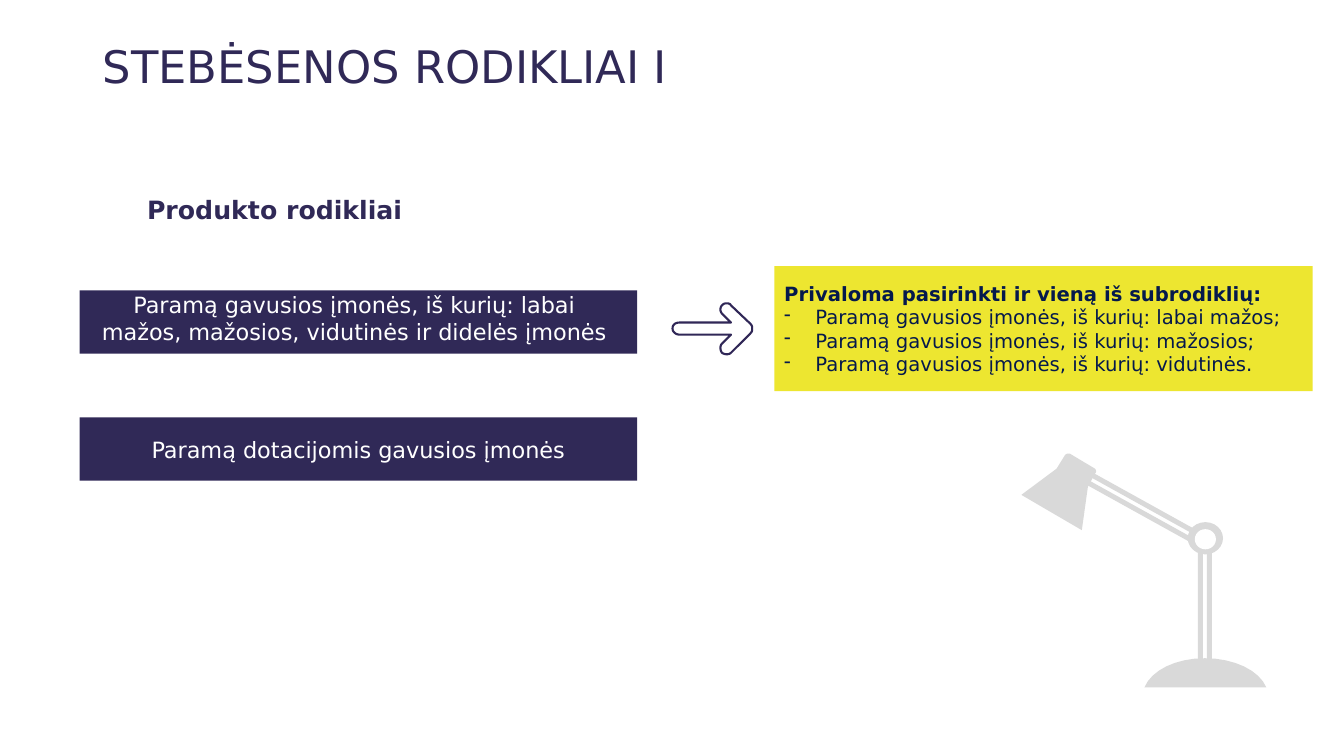
"""Build the slide on monitoring indicators, with a desk lamp as decoration."""
from lxml import etree
from pptx import Presentation
from pptx.dml.color import RGBColor
from pptx.enum.shapes import MSO_SHAPE
from pptx.enum.text import MSO_ANCHOR, MSO_AUTO_SIZE, PP_ALIGN
from pptx.oxml.ns import qn
from pptx.util import Pt

PX = 9144
FONT = "DejaVu Sans"
NAVY = RGBColor(0x30, 0x29, 0x57)
EDGE = RGBColor(0x30, 0x27, 0x57)
INK = RGBColor(0x05, 0x19, 0x4C)
GOLD = RGBColor(0xED, 0xE6, 0x30)
GREY = RGBColor(0xD9, 0xD9, 0xD9)
WHITE = RGBColor(0xFF, 0xFF, 0xFF)
RECT, OVAL = MSO_SHAPE.RECTANGLE, MSO_SHAPE.OVAL
TOP, MIDDLE = MSO_ANCHOR.TOP, MSO_ANCHOR.MIDDLE
LEFT, CENTER = PP_ALIGN.LEFT, PP_ALIGN.CENTER
NO_FIT = MSO_AUTO_SIZE.NONE


def write(shape, text, size, color, align=LEFT, anchor=MIDDLE, wrap=True):
    """Fill a shape with text in one style."""
    frame = shape.text_frame
    frame.text = text
    frame.word_wrap = wrap
    frame.auto_size = NO_FIT
    frame.vertical_anchor = anchor
    for para in frame.paragraphs:
        para.alignment = align
        for run in para.runs:
            run.font.name = FONT
            run.font.size = Pt(size)
            run.font.color.rgb = color
    return frame


def trace(shapes, start, steps):
    """Draw a closed outline of lines (2 numbers) and curves (6 numbers)."""
    pen = shapes.build_freeform(start[0] * PX, start[1] * PX, 1.0)
    points = []
    last = start
    for step in steps:
        if len(step) == 2:
            points.append(step)
        else:
            knots = [last, step[:2], step[2:4], step[4:]]
            for i in range(1, 9):
                t = i / 8
                u = 1 - t
                mix = (u ** 3, 3 * u * u * t, 3 * u * t * t, t ** 3)
                points.append(tuple(
                    sum(m * k[axis] for m, k in zip(mix, knots)) for axis in (0, 1)))
        last = step[-2:]
    pen.add_line_segments([(x * PX, y * PX) for x, y in points], close=True)
    shape = pen.convert_to_shape()
    shape.shadow.inherit = False
    return shape


deck = Presentation()
deck.slide_width, deck.slide_height = 1333 * PX, 750 * PX
slide = deck.slides.add_slide(deck.slide_layouts[5])
shapes = slide.shapes

title = shapes.title
title.left, title.top, title.width, title.height = [n * PX for n in (92, 16, 734, 99)]
write(title, "STEBĖSENOS RODIKLIAI I", 32, NAVY)

lamp = shapes.add_group_shape()
parts = [
    (RECT, 1137, 435, 5, 135, -61, GREY),
    (RECT, 1132, 442, 5, 135, -61, GREY),
    (RECT, 1197, 535, 5, 123, 0, GREY),
    (RECT, 1188, 534, 5, 123, 0, GREY),
    (OVAL, 1178, 518, 35, 32, 0, GREY),
    (OVAL, 1185, 525, 21, 20, 0, WHITE),
]
for kind, x, y, w, h, turn, color in parts:
    part = lamp.shapes.add_shape(kind, x * PX, y * PX, w * PX, h * PX)
    part.rotation = turn
    part.shadow.inherit = False
    part.fill.solid()
    part.fill.fore_color.rgb = color
    part.line.fill.background()

foot = trace(lamp.shapes, (1195, 653), [
    (1166, 653, 1142, 665, 1135, 682), (1256, 682),
    (1249, 665, 1224, 653, 1195, 653)])
shade = trace(lamp.shapes, (1086, 465), [
    (1061, 450), (1059, 450, 1057, 450, 1056, 452), (1048, 465),
    (1013, 491), (1073, 526), (1079, 483), (1086, 470),
    (1088, 468, 1087, 466, 1086, 465)])
for part in (foot, shade):
    part.fill.solid()
    part.fill.fore_color.rgb = GREY
    part.line.fill.background()

boxes = []
for x, y, w, h, color in [(79, 288, 553, 63, NAVY), (79, 414, 553, 63, NAVY),
                          (768, 264, 534, 124, GOLD)]:
    box = shapes.add_shape(RECT, x * PX, y * PX, w * PX, h * PX)
    box.shadow.inherit = False
    box.fill.solid()
    box.fill.fore_color.rgb = color
    box.line.fill.background()
    boxes.append(box)

label = shapes.add_textbox(84 * PX, 284 * PX, 535 * PX, 64 * PX)
write(label, "Paramą gavusios įmonės, iš kurių: labai mažos, mažosios, "
      "vidutinės ir didelės įmonės", 16, WHITE, CENTER, TOP)
write(boxes[1], "Paramą dotacijomis gavusios įmonės", 16, WHITE, CENTER)

head = shapes.add_textbox(136 * PX, 188 * PX, 275 * PX, 40 * PX)
frame = write(head, "Produkto rodikliai", 18, NAVY, anchor=TOP, wrap=False)
frame.paragraphs[0].runs[0].font.bold = True

lines = ["Privaloma pasirinkti ir vieną iš subrodiklių:"]
for kind in ("labai mažos;", "mažosios;", "vidutinės."):
    lines.append("Paramą gavusios įmonės, iš kurių: " + kind)
frame = write(boxes[2], "\n".join(lines), 14, INK)
frame.paragraphs[0].runs[0].font.bold = True
for para in frame.paragraphs[1:]:
    props = para._p.get_or_add_pPr()
    props.set("marL", str(31 * PX))
    props.set("indent", str(-31 * PX))
    etree.SubElement(props, qn("a:buChar")).set("char", "-")

arrow = trace(shapes, (721, 301), [
    (722, 301, 724, 301, 725, 303), (744, 321),
    (746, 323, 746, 324, 746, 326), (746, 328, 746, 329, 744, 331), (725, 350),
    (723, 352, 719, 352, 716, 350), (714, 347, 714, 343, 716, 341),
    (725, 332), (674, 332),
    (670, 332, 667, 329, 667, 326), (667, 322, 670, 320, 674, 320),
    (725, 320), (716, 311),
    (714, 309, 714, 305, 716, 303), (718, 301, 719, 301, 721, 301)])
arrow.fill.background()
arrow.line.color.rgb = EDGE
arrow.line.width = Pt(1.5)

deck.save("out.pptx")
